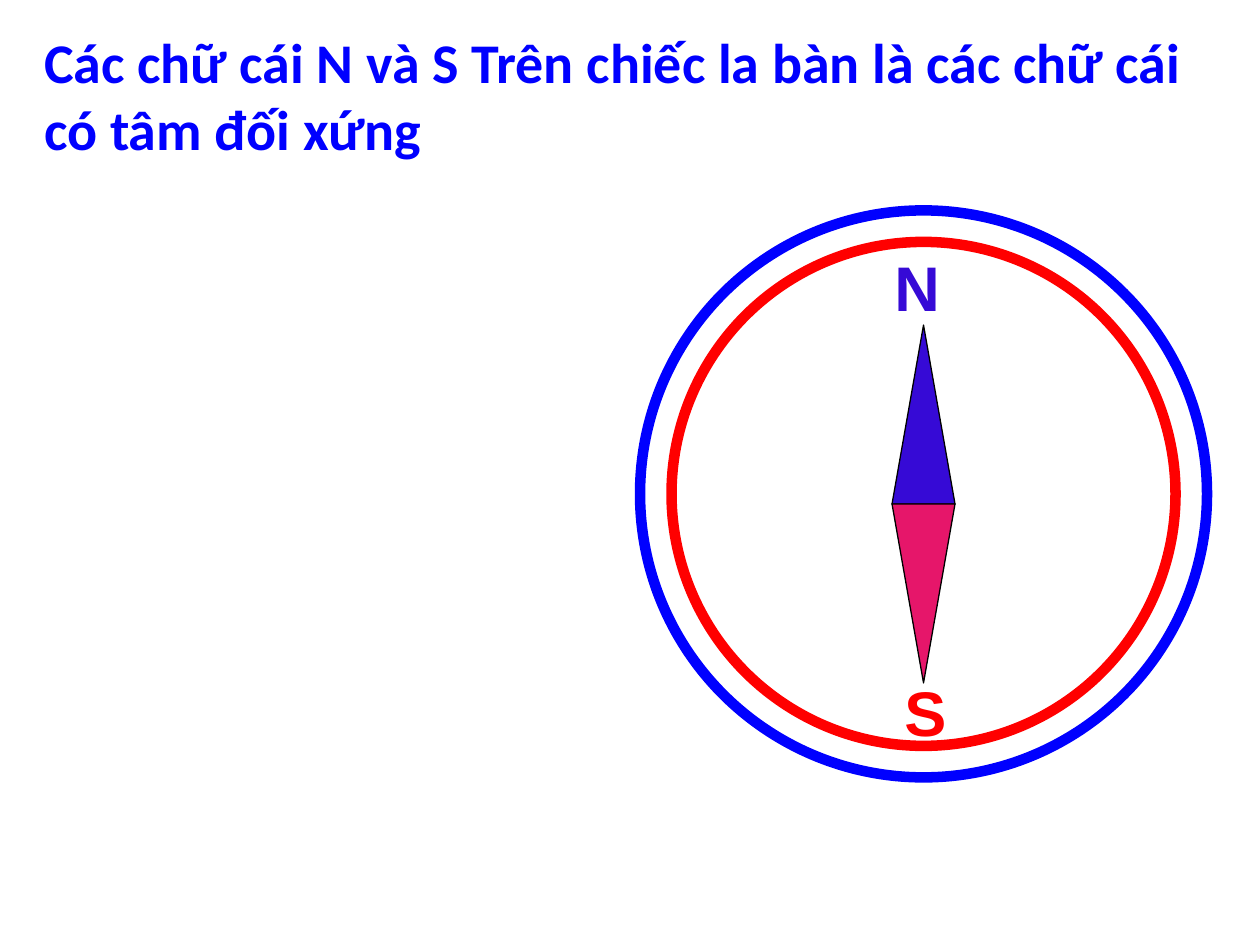
import pptx
import pptx.dml.color
import pptx.enum.shapes
import pptx.enum.text
import pptx.oxml
import pptx.oxml.ns
import pptx.util
from pptx.util import Inches

SHAPES = pptx.enum.shapes.MSO_SHAPE
BLUE, RED = "0000FF", "FF0000"
NORTH, SOUTH = "360AD6", "E6166A"


def color(value):
    return pptx.dml.color.RGBColor.from_string(value)


class CompassSlide:
    def __init__(self, deck):
        self.page = deck.slides.add_slide(deck.slide_layouts[5])

    def add_span(self, para, text, size, font, tint):
        para.alignment = pptx.enum.text.PP_ALIGN.LEFT
        span = para.add_run()
        span.text = text
        span.font.size = pptx.util.Pt(size)
        span.font.name = font
        span.font.bold = True
        span.font.color.rgb = color(tint)

    def title(self, text, left, top, width, height):
        box = self.page.shapes.title
        box.left, box.top = Inches(left), Inches(top)
        box.width, box.height = Inches(width), Inches(height)
        frame = box.text_frame
        frame.word_wrap = True
        frame.auto_size = pptx.enum.text.MSO_AUTO_SIZE.NONE
        frame.vertical_anchor = pptx.enum.text.MSO_ANCHOR.TOP
        self.add_span(frame.paragraphs[0], text, 32, "Calibri", BLUE)

    def shape(self, kind, left, top, width, height, line, weight, fill=None):
        shape = self.page.shapes.add_shape(
            kind, Inches(left), Inches(top), Inches(width), Inches(height))
        shape.shadow.inherit = False
        if fill:
            shape.fill.solid()
            shape.fill.fore_color.rgb = color(fill)
        else:
            shape.fill.background()
        shape.line.color.rgb = color(line)
        shape.line.width = pptx.util.Pt(weight)
        return shape

    def ring(self, center_x, center_y, radius, tint):
        self.shape(SHAPES.OVAL, center_x - radius, center_y - radius,
                   2 * radius, 2 * radius, tint, 6)

    def needle(self, center_x, top, fill, flipped=False):
        width, height = 0.5, 1.42
        half = self.shape(SHAPES.ISOSCELES_TRIANGLE, center_x - width / 2, top,
                          width, height, "000000", 0.75, fill)
        if flipped:
            half.element.spPr.get_or_add_xfrm().set("flipV", "1")

    def letter(self, text, left, top, width, tint):
        box = self.page.shapes.add_textbox(
            Inches(left), Inches(top), Inches(width), Inches(0.7))
        frame = box.text_frame
        frame.word_wrap = True
        para = frame.paragraphs[0]
        self.add_span(para, text, 36, "Arial", tint)
        namespace = pptx.oxml.ns.nsdecls("a")
        para.space_before = pptx.util.Pt(0)
        before = para._p.pPr.find(pptx.oxml.ns.qn("a:spcBef"))
        before.clear()
        before.append(pptx.oxml.parse_xml(f'<a:spcPct {namespace} val="50000"/>'))


def main():
    deck = pptx.Presentation()
    deck.slide_width, deck.slide_height = Inches(10), Inches(7.5)
    slide = CompassSlide(deck)
    slide.title("Các chữ cái N và S Trên chiếc la bàn là các chữ cái có tâm đối xứng",
                0.25, 0.17, 9.58, 1.99)
    center_x, center_y = 7.33, 3.92
    slide.needle(center_x, 2.58, NORTH)
    slide.needle(center_x, 4, SOUTH, flipped=True)
    slide.letter("N", 7, 1.92, 0.58, NORTH)
    slide.letter("S", 7.08, 5.3, 0.83, RED)
    slide.ring(center_x, center_y, 2, RED)
    slide.ring(center_x, center_y, 2.25, BLUE)
    deck.save("out.pptx")


if __name__ == "__main__":
    main()
